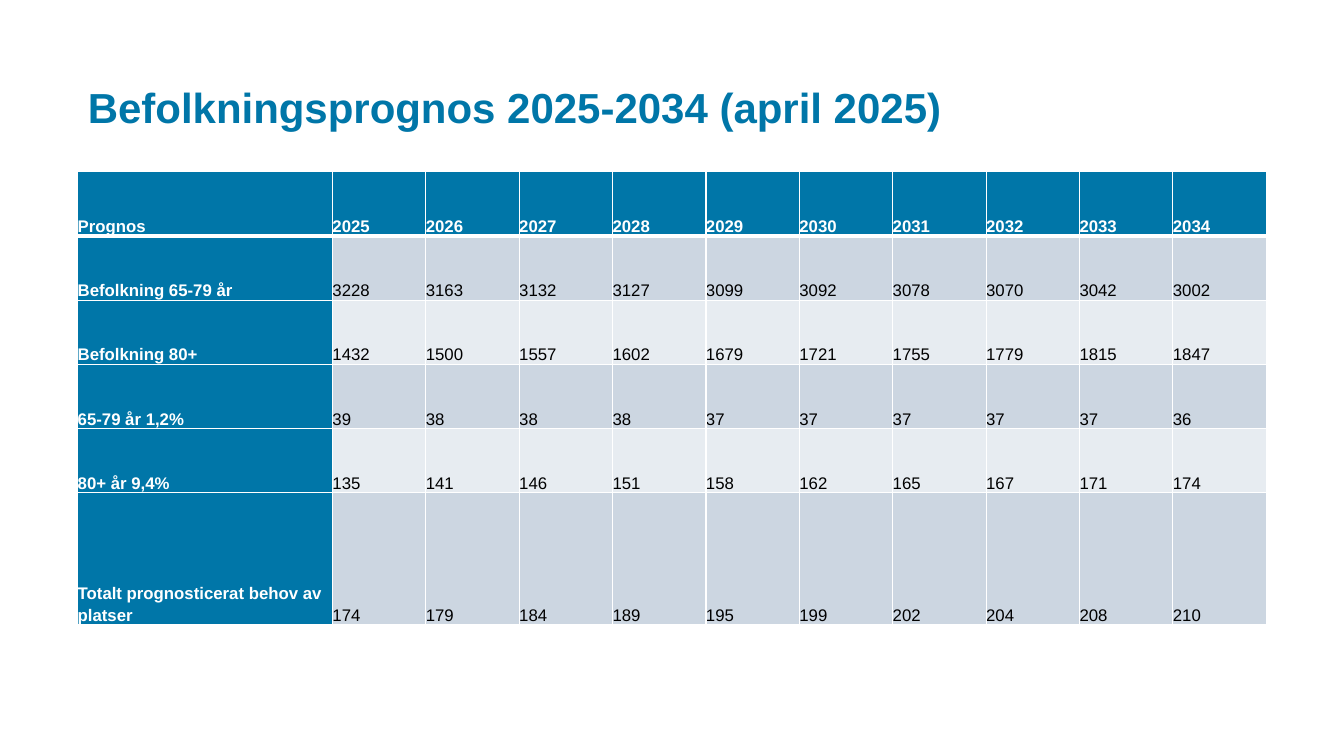
from pptx import Presentation
from pptx.dml.color import RGBColor
from pptx.enum.text import MSO_ANCHOR, MSO_AUTO_SIZE, PP_ALIGN
from pptx.oxml import parse_xml
from pptx.oxml.ns import nsdecls
from pptx.util import Pt

BLUE, WHITE, BLACK = "0076A8", "FFFFFF", "000000"
BANDS = ["E7ECF1", "CCD6E1"]


def rgb(code):
    return RGBColor.from_string(code)


def write(frame, text, size=12, color=BLACK, bold=False, line=1.15, after=8):
    frame.word_wrap = True
    para = frame.paragraphs[0]
    para.alignment = PP_ALIGN.LEFT
    para.line_spacing = line
    para.space_before = Pt(0)
    para.space_after = Pt(after)
    run = para.add_run()
    run.text = text
    run.font.name = "Arial"
    run.font.size = Pt(size)
    run.font.bold = bold
    run.font.color.rgb = rgb(color)


deck = Presentation()
deck.slide_width, deck.slide_height = Pt(960), Pt(540)
slide = deck.slides.add_slide(deck.slide_layouts[5])

# Title
title = slide.shapes.title
title.left, title.top = Pt(55.5), Pt(58.3)
title.width, title.height = Pt(849), Pt(75.6)
frame = title.text_frame
frame.auto_size = MSO_AUTO_SIZE.NONE
frame.vertical_anchor = MSO_ANCHOR.TOP
write(frame, "Befolkningsprognos 2025-2034 (april 2025)",
      size=30, color=BLUE, bold=True, line=Pt(32), after=6)

# Forecast figures
rows = [
    ["Prognos", *range(2025, 2035)],
    ["Befolkning 65-79 år",
     3228, 3163, 3132, 3127, 3099, 3092, 3078, 3070, 3042, 3002],
    ["Befolkning 80+",
     1432, 1500, 1557, 1602, 1679, 1721, 1755, 1779, 1815, 1847],
    ["65-79 år 1,2%", 39, 38, 38, 38, 37, 37, 37, 37, 37, 36],
    ["80+ år 9,4%", 135, 141, 146, 151, 158, 162, 165, 167, 171, 174],
    ["Totalt prognosticerat behov av platser",
     174, 179, 184, 189, 195, 199, 202, 204, 208, 210],
]

# Table grid
table = slide.shapes.add_table(len(rows), len(rows[0]), Pt(55.5), Pt(122.6),
                               Pt(849), Pt(323.8)).table
for c, col in enumerate(table.columns):
    col.width = Pt(66.7 if c else 182)
for r, row in enumerate(table.rows):
    row.height = Pt(94.3 if r == len(rows) - 1 else 45.9)

# Cells: blue header row and first column, banded body, white borders
for r, row in enumerate(rows):
    for c, value in enumerate(row):
        cell = table.cell(r, c)
        head = r == 0 or c == 0
        cell.margin_left = cell.margin_right = Pt(0)
        cell.margin_top = cell.margin_bottom = Pt(0)
        cell.vertical_anchor = MSO_ANCHOR.BOTTOM
        cell.fill.solid()
        cell.fill.fore_color.rgb = rgb(BLUE if head else BANDS[r % 2])
        write(cell.text_frame, str(value),
              color=WHITE if head else BLACK, bold=head)
        props = cell._tc.get_or_add_tcPr()
        for i, side in enumerate("LRTB"):
            thick = (r, side) in [(0, "B"), (1, "T")]
            width = Pt(3 if thick else 1)
            props.insert(i, parse_xml(
                f'<a:ln{side} {nsdecls("a")} w="{width}"><a:solidFill>'
                f'<a:srgbClr val="{WHITE}"/></a:solidFill></a:ln{side}>'))

deck.save("out.pptx")
